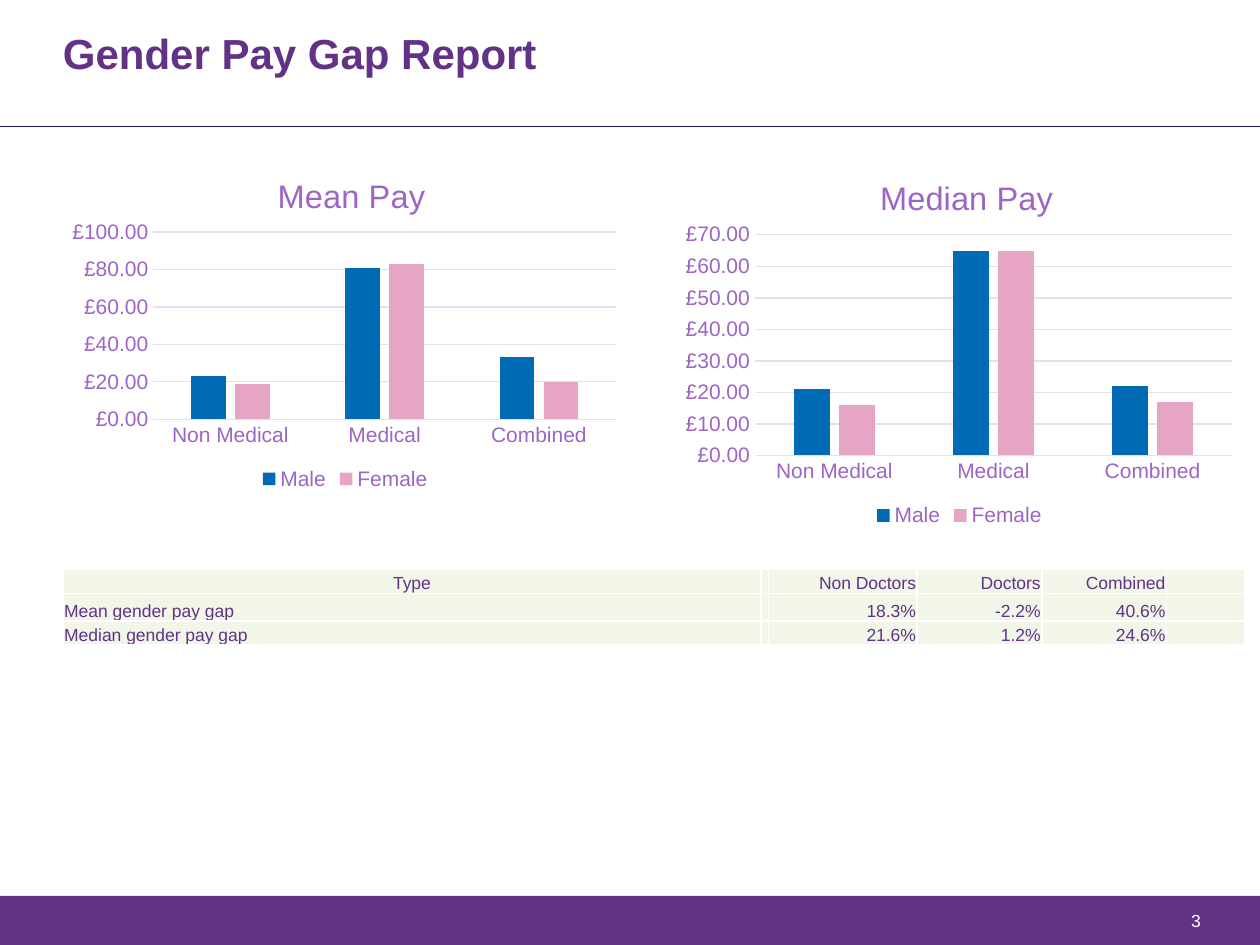
from lxml import etree
from pptx import Presentation
from pptx.chart.data import CategoryChartData
from pptx.dml.color import RGBColor
from pptx.enum.chart import XL_CHART_TYPE, XL_LEGEND_POSITION, XL_TICK_MARK
from pptx.enum.shapes import MSO_CONNECTOR, MSO_SHAPE
from pptx.enum.text import MSO_ANCHOR, PP_ALIGN
from pptx.oxml import parse_xml
from pptx.oxml.ns import nsdecls, qn
from pptx.util import Inches, Pt

LEFT, CENTER, RIGHT = PP_ALIGN.LEFT, PP_ALIGN.CENTER, PP_ALIGN.RIGHT
BOTTOM = MSO_ANCHOR.BOTTOM
NO_TICKS = XL_TICK_MARK.NONE
PURPLE = RGBColor(0x62, 0x32, 0x87)
LILAC = RGBColor(0x9C, 0x65, 0xC6)
PALE_LILAC = RGBColor(0xE8, 0xDB, 0xF2)
NAVY = RGBColor(0x1D, 0x15, 0x5F)
BLUE = RGBColor(0x00, 0x6A, 0xB4)
PINK = RGBColor(0xE6, 0xA5, 0xC4)
PALE_GREEN = RGBColor(0xF1, 0xF6, 0xE9)
WHITE = RGBColor(0xFF, 0xFF, 0xFF)
FONT = "Arial"
POUNDS = '"£"#,##0.00;[Red]"£"#,##0.00'

CATEGORIES = ["Non Medical", "Medical", "Combined"]
SERIES_COLORS = {"Male": BLUE, "Female": PINK}
CHARTS = [
    {"title": "Mean Pay", "place": (0.5, 1.2, 4.48, 2.73), "top": 100, "step": 20,
     "values": {"Male": (23, 81, 33), "Female": (19, 83, 20)},
     "title_at": {"x": 0.37, "y": 0.05},
     "plot_at": {"x": 0.16, "y": 0.235, "w": 0.82, "h": 0.545}},
    {"title": "Median Pay", "place": (5.36, 1.2, 4.51, 3.02), "top": 70, "step": 10,
     "values": {"Male": (21, 65, 22), "Female": (16, 65, 17)},
     "title_at": {"x": 0.35, "y": 0.05},
     "plot_at": {"x": 0.14, "y": 0.22, "w": 0.84, "h": 0.58}},
]
TABLE_ROWS = [
    ("Type", "", "Non Doctors", "Doctors", "Combined", ""),
    ("Mean gender pay gap", "", "18.3%", "-2.2%", "40.6%", ""),
    ("Median gender pay gap", "", "21.6%", "1.2%", "24.6%", ""),
]
COLUMN_WIDTHS = (5.54, 0.04, 1.18, 0.99, 0.99, 0.62)
ROW_HEIGHTS = (0.19, 0.22, 0.19)


def style_font(font, size, color, bold=False):
    font.name = FONT
    font.size = Pt(size)
    font.bold = bold
    font.color.rgb = color


def write_text(frame, text, size=10, color=PURPLE, bold=False, align=LEFT, spacing=None):
    para = frame.paragraphs[0]
    para.alignment = align
    if spacing:
        para.line_spacing = spacing
    span = para.add_run()
    span.text = text
    style_font(span.font, size, color, bold)


def add_text(page, place, text, **style):
    frame = page.shapes.add_textbox(*map(Inches, place)).text_frame
    frame.margin_left = frame.margin_right = frame.margin_top = frame.margin_bottom = 0
    frame.word_wrap = False
    write_text(frame, text, **style)


def place_part(part, fractions, inner=False):
    for old in part.findall(qn("c:layout")):
        part.remove(old)
    target = '<c:layoutTarget val="inner"/>' if inner else ""
    modes = "".join(f'<c:{key}Mode val="edge"/>' for key in "xy")
    sizes = "".join(f'<c:{key} val="{value}"/>' for key, value in fractions.items())
    layout = parse_xml(f'<c:layout {nsdecls("c")}><c:manualLayout>{target}{modes}{sizes}'
                       '</c:manualLayout></c:layout>')
    part.insert(0 if inner else 1, layout)


def add_pay_chart(page, item):
    data = CategoryChartData(number_format=POUNDS)
    data.categories = CATEGORIES
    for name, values in item["values"].items():
        data.add_series(name, values)
    chart = page.shapes.add_chart(XL_CHART_TYPE.COLUMN_CLUSTERED,
                                  *map(Inches, item["place"]), data).chart
    style_font(chart.font, 10, PURPLE)
    write_text(chart.chart_title.text_frame, item["title"], size=18.6, color=LILAC, align=CENTER)
    chart.chart_title.include_in_layout = False
    place_part(chart._chartSpace.chart.find(qn("c:title")), item["title_at"])
    place_part(chart._chartSpace.chart.plotArea, item["plot_at"], inner=True)

    chart.has_legend = True
    chart.legend.position = XL_LEGEND_POSITION.BOTTOM
    chart.legend.include_in_layout = False
    style_font(chart.legend.font, 12, LILAC)

    plot = chart.plots[0]
    plot.gap_width, plot.overlap, plot.vary_by_categories = 219, -27, False
    for series in plot.series:
        series.format.fill.solid()
        series.format.fill.fore_color.rgb = SERIES_COLORS[series.name]

    category_axis, value_axis = chart.category_axis, chart.value_axis
    for axis in (category_axis, value_axis):
        axis.major_tick_mark = axis.minor_tick_mark = NO_TICKS
        style_font(axis.tick_labels.font, 12, LILAC)
    for line in (category_axis.format.line, value_axis.major_gridlines.format.line):
        line.color.rgb = PALE_LILAC
        line.width = Pt(0.75)
    value_axis.format.line.fill.background()
    value_axis.minimum_scale, value_axis.maximum_scale = 0, item["top"]
    value_axis.major_unit = item["step"]
    value_axis.tick_labels.number_format = POUNDS
    value_axis.tick_labels.number_format_is_linked = False


def style_cell(cell, text, align):
    cell.margin_left = cell.margin_right = cell.margin_top = Inches(0.01)
    cell.margin_bottom = 0
    cell.vertical_anchor = BOTTOM
    for side in "LRTB":
        cell._tc.get_or_add_tcPr().append(parse_xml(
            f'<a:ln{side} {nsdecls("a")} w="12700"><a:solidFill><a:srgbClr val="{WHITE}"/>'
            f'</a:solidFill></a:ln{side}>'))
    cell.fill.solid()
    cell.fill.fore_color.rgb = PALE_GREEN
    if text:
        write_text(cell.text_frame, text, align=align)
    else:
        etree.SubElement(cell.text_frame.paragraphs[0]._p, qn("a:endParaRPr"), sz="1000")


def add_gap_table(page):
    table = page.shapes.add_table(len(TABLE_ROWS), len(COLUMN_WIDTHS), Inches(0.5), Inches(4.52),
                                  Inches(sum(COLUMN_WIDTHS)), Inches(sum(ROW_HEIGHTS))).table
    table.first_row = table.horz_banding = False
    for column, width in zip(table.columns, COLUMN_WIDTHS):
        column.width = Inches(width)
    for row, height in zip(table.rows, ROW_HEIGHTS):
        row.height = Inches(height)
    for row_index, texts in enumerate(TABLE_ROWS):
        for column_index, text in enumerate(texts):
            label_align = LEFT if row_index else CENTER
            style_cell(table.cell(row_index, column_index), text,
                       RIGHT if column_index else label_align)


def main():
    deck = Presentation()
    deck.slide_width, deck.slide_height = Inches(10), Inches(7.5)
    page = deck.slides.add_slide(deck.slide_layouts[6])

    footer = page.shapes.add_shape(MSO_SHAPE.RECTANGLE, 0, Inches(7.11), Inches(10), Inches(0.39))
    footer.shadow.inherit = False
    footer.fill.solid()
    footer.fill.fore_color.rgb = PURPLE
    footer.line.fill.background()

    rule = page.shapes.add_connector(MSO_CONNECTOR.STRAIGHT, 0, Inches(1), Inches(10), Inches(1))
    rule.line.color.rgb = NAVY
    rule.line.width = Pt(0.25)
    etree.SubElement(rule._element.spPr, qn("a:effectLst"))

    add_text(page, (9.26, 7.22, 0.27, 0.23), "3", color=WHITE, align=RIGHT)
    add_text(page, (0.5, 0.26, 3.93, 0.34), "Gender Pay Gap Report",
             size=24, bold=True, spacing=0.9)
    for item in CHARTS:
        add_pay_chart(page, item)
    add_gap_table(page)
    deck.save("out.pptx")


if __name__ == "__main__":
    main()
